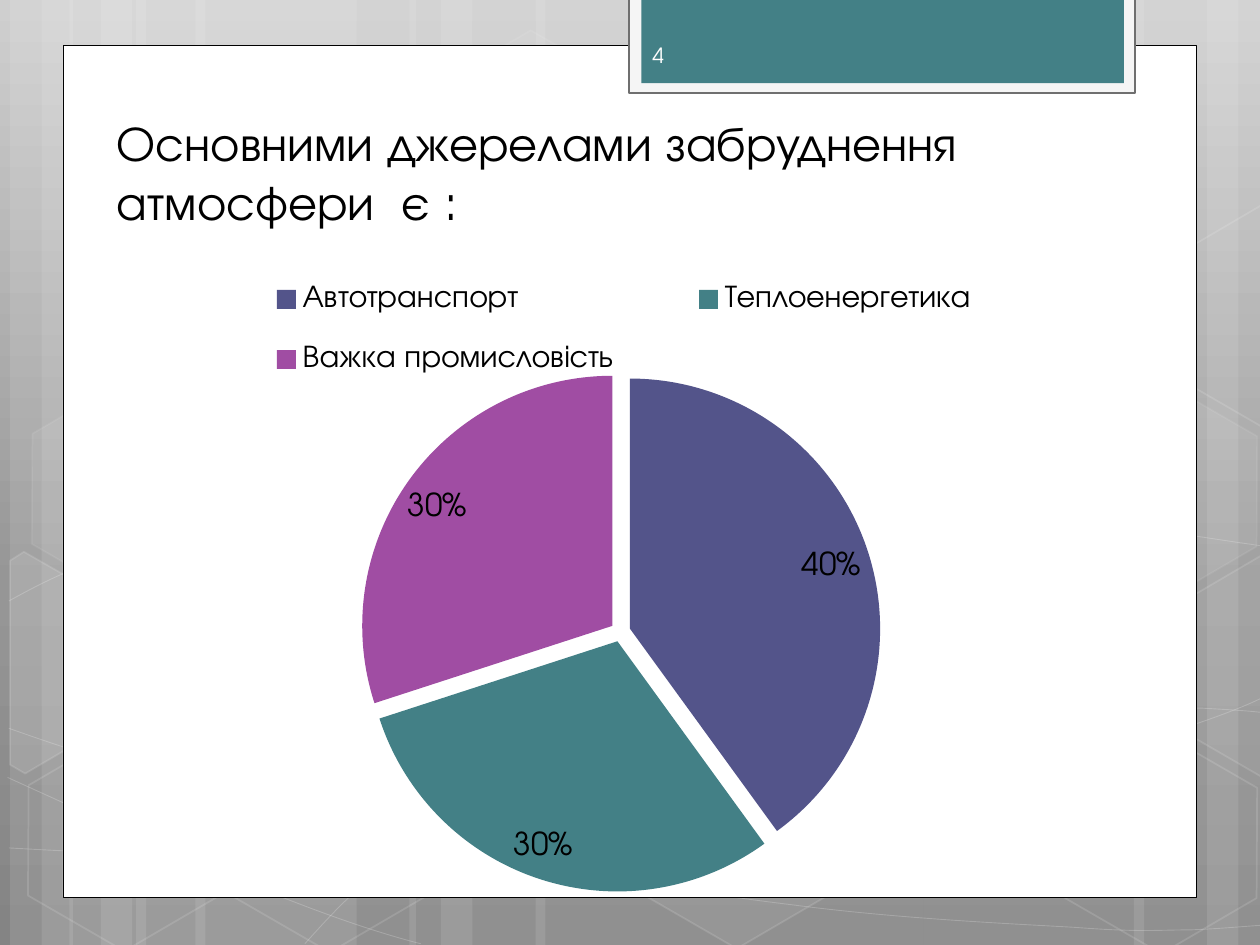
from lxml import etree
from pptx import Presentation, util as u
from pptx.chart.data import CategoryChartData
from pptx.dml.color import RGBColor
from pptx.enum import chart as ch, shapes, text
from pptx.oxml import parse_xml
from pptx.oxml.ns import nsdecls, qn

# Content
TITLE = "Основними джерелами забруднення атмосфери  є :"
PAGE = "4"
SOURCES = [("Автотранспорт", 40, "indigo"), ("Теплоенергетика", 30, "teal"),
           ("Важка промисловість", 30, "purple")]

# Style
FONT = "TeX Gyre Adventor"
COLORS = {"indigo": "53548A", "teal": "438086", "purple": "A04DA3", "white": "FFFFFF",
          "black": "000000", "frame": "F5F5F5", "edge": "6F6F6F", "page": "FEFEFE"}
BACKGROUND = [(0, "CFCFCF"), (62, "969696"), (100, "848484")]
W, H = 10, 7.5

# Backdrop: stripes (left, width), hexagons (left, top, fill %, line %)
STRIPES = [(1.08, 1.75), (0.08, 0.5), (0.33, 0.83), (1.55, 1.75), (0.55, 0.5), (0.8, 0.83),
           (7.33, 1.75), (9.58, 0.5), (9, 0.83), (4.25, 3.08), (3.25, 0.5), (3.5, 0.83)]
HEXAGONS = [(3.34, 0.36, 4, 8), (4.97, 5.89, 6, 12), (0.11, 5.91, 0, 12),
            (0.14, 3.12, 7, 8), (1.74, 5.92, 0, 12), (7.53, 4.53, 10, 12),
            (8.34, 5.93, 0, 12), (8.34, 3.14, 7, 8)]
# Hexagons cut by the slide edge: fill %, corners
CUT_HEXAGONS = [
    (10, [(0.08, 4.45), (0.19, 4.38), (0.96, 4.82), (0.95, 5.7), (0.2, 6.14), (0.08, 6.07)]),
    (4, [(9.26, 4.85), (10.01, 4.41), (10.09, 4.46), (10.09, 6.13), (10.02, 6.17), (9.26, 5.73)]),
    (0, [(9.26, 2.07), (10.01, 1.63), (10.1, 1.68), (10.09, 3.35), (10.02, 3.39), (9.26, 2.95)])]
# Waves: start point, then two handles and an end point for each Bezier piece
WAVES = [
    [(0.07, 6.73), (0.61, 6.76), (1.15, 6.79), (1.9, 6.78), (2.65, 6.77), (3.58, 6.75),
     (4.58, 6.65), (5.58, 6.55), (7, 6.36), (7.92, 6.17), (8.83, 5.98), (9.77, 5.68), (10.07, 5.51)],
    [(0.07, 4.77), (0.36, 4.61), (0.65, 4.46), (1.21, 4.31), (1.78, 4.16), (2.59, 3.94),
     (3.47, 3.87), (4.36, 3.8), (5.44, 3.79), (6.54, 3.87), (7.64, 3.95), (9.47, 4.26), (10.07, 4.34)],
    [(0.06, 6.17), (1.27, 6.72), (2.47, 7.27), (3.34, 7.49)],
    [(0.07, 5.78), (0.38, 5.89), (0.7, 6), (1.28, 6.16), (1.86, 6.31), (2.73, 6.56),
     (3.57, 6.73), (4.4, 6.9), (5.45, 7.08), (6.28, 7.18), (7.11, 7.29), (8, 7.33),
     (8.53, 7.36), (9.05, 7.4), (9.19, 7.38), (9.45, 7.38), (9.71, 7.37), (9.89, 7.35), (10.07, 7.34)],
    [(2.42, 7.49), (2.6, 7.29), (2.78, 7.09), (3.02, 6.91), (3.26, 6.73), (3.6, 6.53),
     (3.88, 6.39), (4.16, 6.25), (4.33, 6.19), (4.7, 6.09), (5.06, 5.99), (5.73, 5.85),
     (6.08, 5.78), (6.44, 5.71), (6.49, 5.71), (6.8, 5.69), (7.11, 5.66), (7.6, 5.63),
     (7.94, 5.62), (8.29, 5.61), (8.86, 5.62), (8.86, 5.62), (9.08, 5.62), (9.3, 5.62),
     (9.53, 5.62), (9.71, 5.63), (9.88, 5.64), (9.97, 5.65), (10.06, 5.66), (10.03, 5.65), (10.06, 5.66)]]

# Page panel and tab: box, fill, line colour, line width
PANELS = [((0.5, 0.36, 9, 6.76), "white", "black", 0.5),
          ((4.99, -0.02, 4.02, 0.76), "frame", "edge", 1.25),
          ((5.09, -0.02, 3.83, 0.68), "teal", None, 0)]
TEXTS = [((0.83, 0.89, 7.8, 1.42), TITLE, 28, "black",
          {"vertical_anchor": text.MSO_ANCHOR.TOP, "margin_top": 0}),
         ((5.08, 0.24, 1.46, 0.4), PAGE, 12, "page",
          {"vertical_anchor": text.MSO_ANCHOR.MIDDLE})]
CHART_BOX = (0.98, 1.78, 7.87, 5.43)
PIE_BOX = (2.86, 2.95, 4.13, 4.13)
LEGEND_BOX = (1.6, 2.02, 6.7, 1.19)


def inches(box):
    return [u.Inches(v) for v in box]


def rgb(name):
    return RGBColor.from_string(COLORS[name])


def paint(part, name, opacity=100):
    part.solid()
    part.fore_color.rgb = rgb(name)
    if opacity < 100:
        color = part._xPr.find(qn("a:solidFill"))[0]
        etree.SubElement(color, qn("a:alpha")).set("val", str(opacity * 1000))


def style(shape, fill=None, fill_opacity=100, line=None, width=0, line_opacity=100):
    shape.shadow.inherit = False
    if fill and fill_opacity:
        paint(shape.fill, fill, fill_opacity)
    else:
        shape.fill.background()
    if line:
        paint(shape.line.fill, line, line_opacity)
        shape.line.width = u.Pt(width)
    else:
        shape.line.fill.background()


def outline(points, close):
    scale = 100
    scaled = [(round(x * scale), round(y * scale)) for x, y in points]
    builder = slide.shapes.build_freeform(*scaled[0], scale=u.Inches(1) / scale)
    builder.add_line_segments(scaled[1:], close=close)
    return builder.convert_to_shape()


def curve(points):
    """Turn every three segments of an open outline into one Bezier piece."""
    shape = outline(points, False)
    segments = list(shape._element.iter(qn("a:lnTo")))
    for i in range(0, len(segments), 3):
        piece = etree.Element(qn("a:cubicBezTo"))
        segments[i].addprevious(piece)
        for segment in segments[i:i + 3]:
            piece.append(segment[0])
            segment.getparent().remove(segment)
    return shape


def layout(box, inner=False):
    left, top, width, height = CHART_BOX
    shares = {"x": (box[0] - left) / width, "y": (box[1] - top) / height,
              "w": box[2] / width, "h": box[3] / height}
    target = '<c:layoutTarget val="inner"/>' if inner else ""
    modes = '<c:xMode val="edge"/><c:yMode val="edge"/>'
    sizes = "".join(f'<c:{k} val="{v:.4f}"/>' for k, v in shares.items())
    return parse_xml(f'<c:layout {nsdecls("c")}><c:manualLayout>{target}{modes}{sizes}'
                     '</c:manualLayout></c:layout>')


prs = Presentation()
prs.slide_width, prs.slide_height = inches((W, H))
slide = prs.slides.add_slide(prs.slide_layouts[6])
add_shape = slide.shapes.add_shape

# Background gradient
stops = "".join(f'<a:gs pos="{p * 1000}"><a:srgbClr val="{c}"/></a:gs>' for p, c in BACKGROUND)
slide.element.cSld.insert(0, parse_xml(
    f'<p:bg {nsdecls("p", "a")}><p:bgPr><a:gradFill rotWithShape="1"><a:gsLst>{stops}</a:gsLst>'
    '<a:lin ang="5400000" scaled="0"/></a:gradFill><a:effectLst/></p:bgPr></p:bg>'))

# Backdrop
for left, width in STRIPES:
    style(add_shape(shapes.MSO_SHAPE.RECTANGLE, *inches((left, 0, width, H))), "white", 10)
for wave in WAVES:
    style(curve(wave), line="white", width=0.5, line_opacity=20)
for left, top, fill, line in HEXAGONS:
    hexagon = add_shape(shapes.MSO_SHAPE.HEXAGON, *inches((left, top, 1.75, 1.52)))
    hexagon.rotation = 30
    hexagon.adjustments[0], hexagon.adjustments[1] = 0.285, 1.155
    style(hexagon, "white", fill, "white", 1, line)
for fill, corners in CUT_HEXAGONS:
    style(outline(corners, True), "white", fill, "white", 1, 12)

# Page panel and tab
for box, fill, line, width in PANELS:
    style(add_shape(shapes.MSO_SHAPE.RECTANGLE, *inches(box)), fill, line=line, width=width)

# Pie chart
data = CategoryChartData(number_format="0")
data.categories = [name for name, _, _ in SOURCES]
data.add_series("Series 1", [value for _, value, _ in SOURCES])
pie = slide.shapes.add_chart(ch.XL_CHART_TYPE.PIE, *inches(CHART_BOX), data).chart
pie.has_title = False
pie.has_legend = True
for owner, values in [
        (pie.font, {"name": FONT, "size": u.Pt(18)}),
        (pie.font.color, {"rgb": rgb("black")}),
        (pie.legend, {"position": ch.XL_LEGEND_POSITION.TOP, "include_in_layout": False})]:
    for key, value in values.items():
        setattr(owner, key, value)

plot = pie.plots[0]
plot.vary_by_categories = True
plot.has_data_labels = True
for key, value in {"show_percentage": True, "show_value": False, "number_format": "0%",
                   "number_format_is_linked": False,
                   "position": ch.XL_LABEL_POSITION.BEST_FIT}.items():
    setattr(plot.data_labels, key, value)
series = plot.series[0]
for i, (_, _, color) in enumerate(SOURCES):
    paint(series.points[i].format.fill, color)
series._element.find(qn("c:dPt")).addprevious(
    parse_xml(f'<c:explosion {nsdecls("c")} val="4"/>'))

plot_area = pie._chartSpace.chart.plotArea
for old in plot_area.findall(qn("c:layout")):
    plot_area.remove(old)
plot_area.insert(0, layout(PIE_BOX, inner=True))
legend = pie.legend._element
for old in legend.findall(qn("c:layout")):
    legend.remove(old)
legend.find(qn("c:legendPos")).addnext(layout(LEGEND_BOX))

# Title and page number
for box, words, size, color, frame_format in TEXTS:
    frame = slide.shapes.add_textbox(*inches(box)).text_frame
    for key, value in {"word_wrap": True, **frame_format}.items():
        setattr(frame, key, value)
    run = frame.paragraphs[0].add_run()
    run.text = words
    run.font.name, run.font.size = FONT, u.Pt(size)
    run.font.color.rgb = rgb(color)

prs.save("out.pptx")
